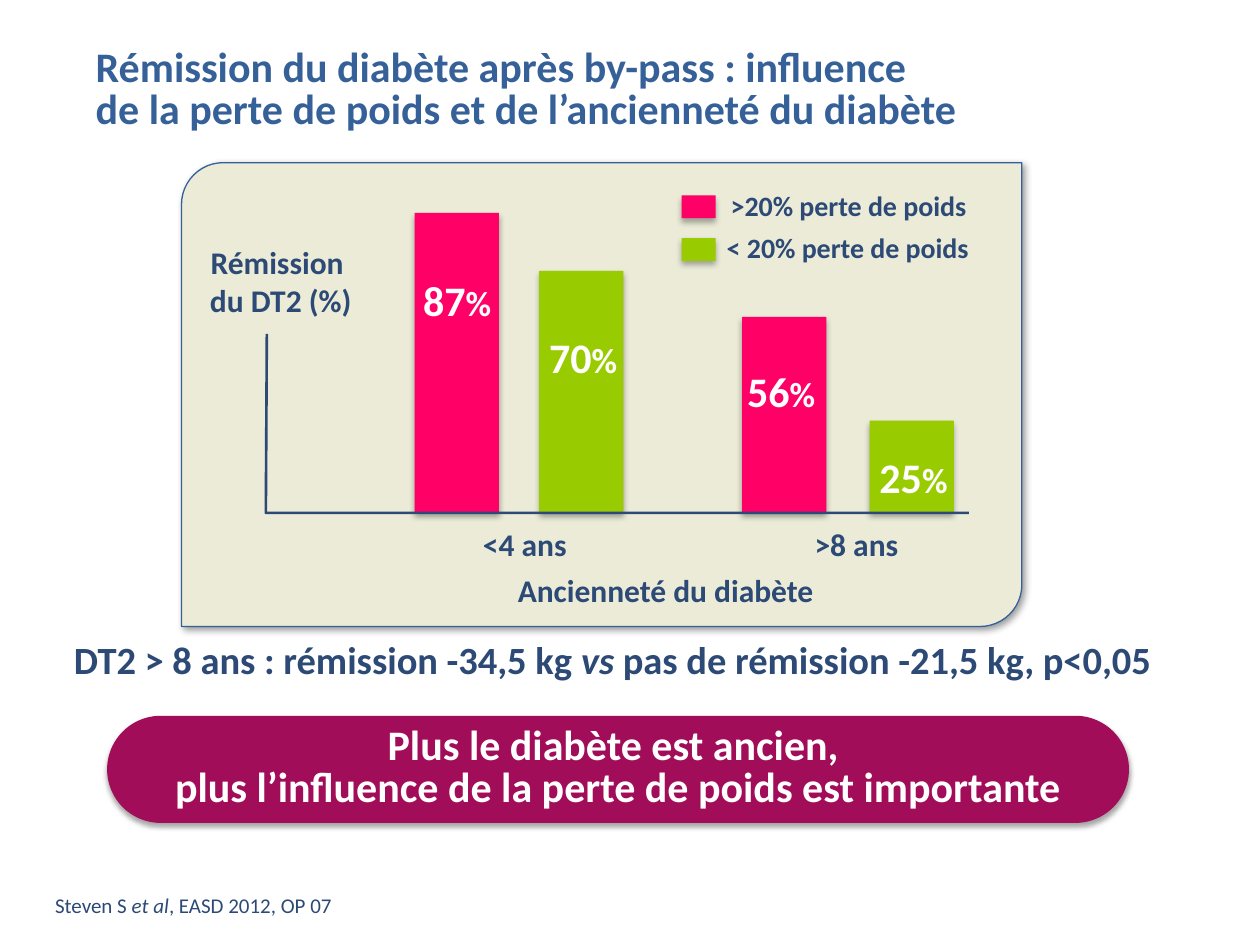
from dataclasses import dataclass
from typing import NamedTuple, Optional

import pptx
import pptx.dml.color
import pptx.enum.shapes
import pptx.enum.text
import pptx.oxml
import pptx.oxml.ns
import pptx.util
from pptx.util import Cm

ALIGN = pptx.enum.text.PP_ALIGN
SHAPE = pptx.enum.shapes.MSO_SHAPE


@dataclass(frozen=True)
class Theme:
    font: str = "Calibri"
    ink: str = "2C4A75"
    title: str = "356198"
    panel: str = "EBEBD8"
    high_loss: str = "FF0066"
    low_loss: str = "99CC00"
    banner: str = "A10D59"
    white: str = "FFFFFF"
    heading_size: int = 24
    stat_size: int = 22
    percent_size: int = 20
    label_size: int = 18
    legend_size: int = 16
    source_size: int = 12


THEME = Theme()


class Box(NamedTuple):
    """Position and size in centimetres."""
    left: float
    top: float
    width: float
    height: float


class Run(NamedTuple):
    text: str
    size: Optional[int] = None
    italic: Optional[bool] = None


class Shadow(NamedTuple):
    """Opacity in percent, blur and distance in points, angle in degrees."""
    opacity: int
    blur: float
    distance: float
    angle: int


class Style(NamedTuple):
    size: int
    color: str = THEME.ink
    bold: bool = True
    align: Optional[ALIGN] = None
    spacing: Optional[int] = None


@dataclass(frozen=True)
class Bar:
    percent: int
    color: str
    left: float
    height: float
    label: Box


@dataclass(frozen=True)
class LegendEntry:
    color: str
    swatch_top: float
    text: str
    text_box: Box


class Label(NamedTuple):
    lines: list[list[Run]]
    box: Box
    style: Style
    wrap: bool = True


BASELINE = 10.34
BAR_WIDTH = 1.7
PANEL_SHADOW = Shadow(40, 4, 2, 45)
BAR_SHADOW = Shadow(32, 3.5, 2.2, 90)
BANNER_SHADOW = Shadow(35, 3.1, 1.8, 90)

HEADING = Style(THEME.heading_size, THEME.title, spacing=24)
BANNER = Style(THEME.heading_size, THEME.white, align=ALIGN.CENTER, spacing=24)
AXIS_LABEL = Style(THEME.label_size, align=ALIGN.CENTER)
VALUE = Style(THEME.heading_size, THEME.white)
LEGEND = Style(THEME.legend_size)

BARS = [
    Bar(87, THEME.high_loss, 8.36, 6.05, Box(8.28, 5.41, 2.39, 1.27)),
    Bar(70, THEME.low_loss, 10.87, 4.88, Box(10.82, 6.55, 2.44, 1.27)),
    Bar(56, THEME.high_loss, 14.96, 3.95, Box(14.81, 7.24, 2.36, 1.27)),
    Bar(25, THEME.low_loss, 17.53, 1.86, Box(17.48, 8.97, 2.24, 1.27)),
]
LEGEND_ENTRIES = [
    LegendEntry(THEME.high_loss, 3.94, ">20% perte de poids", Box(14.48, 3.68, 5.33, 0.94)),
    LegendEntry(THEME.low_loss, 4.8, "< 20% perte de poids", Box(14.4, 4.52, 5.46, 0.94)),
]
CHART_LABELS = [
    Label([[Run("Rémission \vdu DT2 (%)")]], Box(3.96, 4.78, 3.4, 1.8), AXIS_LABEL, False),
    Label([[Run("<4 ans")]], Box(8.41, 10.46, 4.34, 1.02), AXIS_LABEL),
    Label([[Run(">8 ans")]], Box(14.99, 10.46, 4.55, 1.02), AXIS_LABEL),
    Label([[Run("Ancienneté du diabète")]], Box(7.26, 11.38, 12.32, 1.02), AXIS_LABEL),
]
PAGE_LABELS = [
    Label([[Run("Rémission du diabète après by-pass : influence")],
           [Run("de la perte de poids et de l’ancienneté du diabète")]],
          Box(1.68, 0.86, 18.03, 1.98), HEADING, False),
    Label([[Run("DT2 > 8 ans : rémission -34,5 kg "), Run("vs", italic=True),
            Run(" pas de rémission -21,5 kg, p<0,05")]],
          Box(1.24, 12.7, 24.16, 1.19), Style(THEME.stat_size)),
    Label([[Run("Steven S "), Run("et al", italic=True), Run(", EASD 2012, OP 07")]],
          Box(0.86, 17.86, 8.46, 0.76), Style(THEME.source_size, bold=False)),
]


def rgb(color: str) -> pptx.dml.color.RGBColor:
    return pptx.dml.color.RGBColor.from_string(color)


def write(tf, lines: list[list[Run]], style: Style) -> None:
    for i, runs in enumerate(lines):
        p = tf.add_paragraph() if i else tf.paragraphs[0]
        p.alignment = style.align
        if style.spacing:
            p.line_spacing = pptx.util.Pt(style.spacing)
        p.font.name = THEME.font
        p.font.size = pptx.util.Pt(style.size)
        p.font.bold = style.bold
        p.font.color.rgb = rgb(style.color)
        for run in runs:
            for j, piece in enumerate(run.text.split("\v")):
                if j:
                    p.add_line_break()
                r = p.add_run()
                r.text = piece
                r.font.italic = run.italic
                if run.size:
                    r.font.size = pptx.util.Pt(run.size)


def add_label(s, label: Label) -> None:
    tf = s.shapes.add_textbox(*map(Cm, label.box)).text_frame
    tf.word_wrap = label.wrap
    tf.auto_size = pptx.enum.text.MSO_AUTO_SIZE.SHAPE_TO_FIT_TEXT
    write(tf, label.lines, label.style)


def add_block(s, kind: SHAPE, box: Box, color: str, shadow: Shadow):
    """Add a filled shape without outline and with a soft black shadow."""
    sp = s.shapes.add_shape(kind, *map(Cm, box))
    sp.fill.solid()
    sp.fill.fore_color.rgb = rgb(color)
    sp.line.fill.background()
    sp.shadow.inherit = False
    effects = sp._element.spPr.find(pptx.oxml.ns.qn("a:effectLst"))
    effects.append(pptx.oxml.parse_xml(
        f'<a:outerShdw {pptx.oxml.ns.nsdecls("a")} blurRad="{pptx.util.Pt(shadow.blur)}"'
        f' dist="{pptx.util.Pt(shadow.distance)}" dir="{shadow.angle * 60000}" rotWithShape="0">'
        f'<a:srgbClr val="000000"><a:alpha val="{shadow.opacity * 1000}"/></a:srgbClr>'
        '</a:outerShdw>'))
    return sp


def set_line(sp, color: str, width: float) -> None:
    sp.line.color.rgb = rgb(color)
    sp.line.width = pptx.util.Pt(width)


def add_axes(s) -> None:
    builder = s.shapes.build_freeform(Cm(5.38), Cm(6.73))
    builder.add_line_segments([(Cm(5.36), Cm(BASELINE)), (Cm(19.53), Cm(BASELINE))], close=False)
    sp = builder.convert_to_shape()
    sp.fill.background()
    sp.shadow.inherit = False
    set_line(sp, THEME.ink, 1.5)


def add_bar_chart(s) -> None:
    panel = add_block(s, SHAPE.ROUND_2_DIAG_RECTANGLE, Box(3.66, 3.28, 16.94, 9.35),
                      THEME.panel, PANEL_SHADOW)
    panel.adjustments[0] = 0.09
    set_line(panel, THEME.title, 0.75)
    for bar in BARS:
        box = Box(bar.left, BASELINE - bar.height, BAR_WIDTH, bar.height)
        add_block(s, SHAPE.RECTANGLE, box, bar.color, BAR_SHADOW)
    add_axes(s)
    for bar in BARS:
        runs = [Run(str(bar.percent)), Run("%", THEME.percent_size)]
        add_label(s, Label([runs], bar.label, VALUE))
    for entry in LEGEND_ENTRIES:
        add_block(s, SHAPE.RECTANGLE, Box(13.74, entry.swatch_top, 0.69, 0.46),
                  entry.color, BAR_SHADOW)
        add_label(s, Label([[Run(entry.text)]], entry.text_box, LEGEND, False))
    for label in CHART_LABELS:
        add_label(s, label)


def add_banner(s) -> None:
    sp = add_block(s, SHAPE.ROUNDED_RECTANGLE, Box(2.16, 14.43, 20.6, 2.16),
                   THEME.banner, BANNER_SHADOW)
    sp.adjustments[0] = 0.5
    sp.text_frame.vertical_anchor = pptx.enum.text.MSO_ANCHOR.MIDDLE
    write(sp.text_frame, [[Run("Plus le diabète est ancien, ")],
                          [Run("plus l’influence de la perte de poids est importante")]], BANNER)


def main() -> None:
    prs = pptx.Presentation()
    prs.slide_width, prs.slide_height = Cm(25.4), Cm(19.05)
    s = prs.slides.add_slide(prs.slide_layouts[6])
    add_bar_chart(s)
    for label in PAGE_LABELS:
        add_label(s, label)
    add_banner(s)
    prs.save("out.pptx")


if __name__ == "__main__":
    main()
